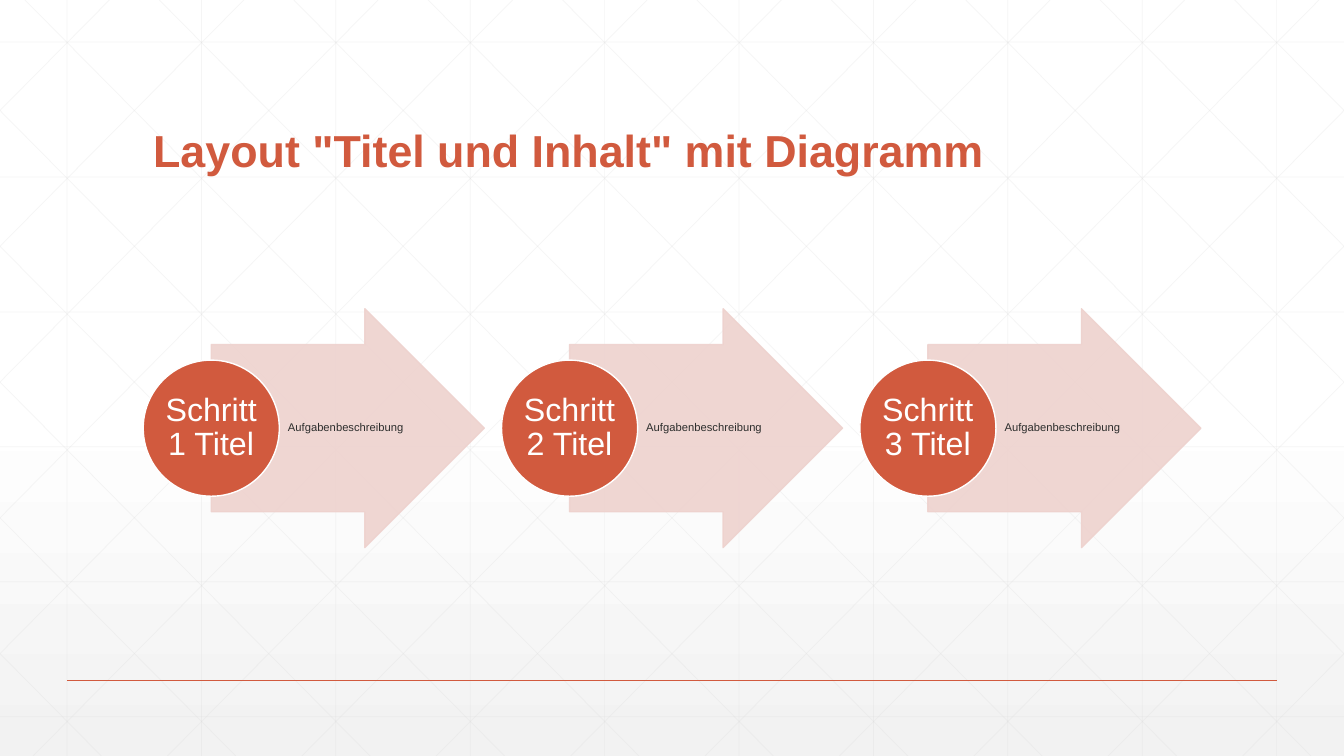
from copy import deepcopy

from lxml.etree import SubElement
from pptx import Presentation
from pptx.dml.color import RGBColor
from pptx.enum.shapes import MSO_CONNECTOR, MSO_SHAPE
from pptx.enum.text import MSO_ANCHOR, PP_ALIGN
from pptx.oxml.ns import qn
from pptx.util import Cm, Pt

TITLE = 'Layout "Titel und Inhalt" mit Diagramm'
STEPS = [
    ("Schritt 1 Titel", "Aufgabenbeschreibung"),
    ("Schritt 2 Titel", "Aufgabenbeschreibung"),
    ("Schritt 3 Titel", "Aufgabenbeschreibung"),
]
COLORS = {
    "accent": "D15A3E",
    "arrow": "EED2CE",
    "body": "2D2E2D",
    "grid": "D9D9D9",
    "white": "FFFFFF",
    "floor": "F2F2F2",
}
BACKGROUND = [(0, "white"), (0.53, "white"), (1, "floor")]
FONT = "Arial"

WIDTH, HEIGHT = 33.87, 19.05
GRID_X, GRID_STEP_X, COLUMNS = 1.69, WIDTH / 10, 10
GRID_Y, GRID_STEP_Y, ROWS = 1.06, 3.4, 6
DIAGONAL_X, DIAGONAL_RUN = 0.63, 0.99
FOOTER_Y = 17.15
STEP_LEFT, STEP_PITCH, STEP_MIDDLE = 3.61, 9.03, 10.79
CIRCLE = 3.43
ARROW_WIDTH, ARROW_HEIGHT = 6.88, 6.02
TASK_WIDTH, TASK_HEIGHT = 3.35, 4.22


def rgb(name):
    return RGBColor.from_string(COLORS[name])


def set_opacity(fill_owner, percent):
    for color in fill_owner.iter(qn("a:srgbClr")):
        SubElement(color, qn("a:alpha"), val=str(percent * 1000))


def write(shape, text, size, color, bold=False, align=PP_ALIGN.CENTER,
          anchor=MSO_ANCHOR.MIDDLE, inset=0.04):
    frame = shape.text_frame
    frame.word_wrap = True
    frame.vertical_anchor = anchor
    frame.margin_left = frame.margin_right = Cm(inset)
    frame.margin_top = frame.margin_bottom = Cm(inset / 2)
    paragraph = frame.paragraphs[0]
    paragraph.alignment = align
    paragraph.line_spacing = 0.9
    run = paragraph.add_run()
    run.text = text
    run.font.name = FONT
    run.font.size = Pt(size)
    run.font.bold = bold
    run.font.color.rgb = rgb(color)


def add_line(shapes, start, end, color, width, opacity=100):
    line = shapes.add_connector(
        MSO_CONNECTOR.STRAIGHT, *(Cm(value) for value in (*start, *end)))
    line.line.color.rgb = rgb(color)
    line.line.width = Pt(width)
    if opacity < 100:
        set_opacity(line._element.spPr, opacity)
    SubElement(line._element.spPr, qn("a:effectLst"))


def add_filled(shapes, preset, left, width, height, fill, outline):
    shape = shapes.add_shape(preset, Cm(left), Cm(STEP_MIDDLE - height / 2),
                             Cm(width), Cm(height))
    shape.shadow.inherit = False
    shape.fill.solid()
    shape.fill.fore_color.rgb = rgb(fill)
    shape.line.color.rgb = rgb(outline)
    shape.line.width = Pt(1)
    return shape


def paint_background(slide):
    fill = slide.background.fill
    fill.gradient()
    fill.gradient_angle = 270
    stop_list = next(slide.element.iter(qn("a:gsLst")))
    stop_list.insert(1, deepcopy(stop_list[0]))
    for stop, (position, color) in zip(fill.gradient_stops, BACKGROUND):
        stop.position = position
        stop.color.rgb = rgb(color)


def grid_lines():
    for column in range(COLUMNS):
        x = GRID_X + column * GRID_STEP_X
        yield (x, 0), (x, HEIGHT)
    for row in range(ROWS):
        y = GRID_Y + row * GRID_STEP_Y
        yield (0, y), (WIDTH, y)
    for index in range(-5, 10):
        x = DIAGONAL_X + index * GRID_STEP_X
        top = max(0, -x / DIAGONAL_RUN)
        bottom = min(HEIGHT, (WIDTH - x) / DIAGONAL_RUN)
        ends = [(x + DIAGONAL_RUN * y, y) for y in (top, bottom)]
        yield ends
        yield [(WIDTH - end_x, y) for end_x, y in ends]


def add_step(shapes, left, heading, task):
    arrow = add_filled(shapes, MSO_SHAPE.RIGHT_ARROW, left + CIRCLE / 2,
                       ARROW_WIDTH, ARROW_HEIGHT, "arrow", "arrow")
    arrow.adjustments[0], arrow.adjustments[1] = 0.7, 0.5
    set_opacity(arrow._element.spPr, 90)
    task_box = shapes.add_textbox(
        Cm(left + CIRCLE), Cm(STEP_MIDDLE - TASK_HEIGHT / 2),
        Cm(TASK_WIDTH), Cm(TASK_HEIGHT))
    write(task_box, task, 8, "body")
    circle = add_filled(shapes, MSO_SHAPE.OVAL, left, CIRCLE, CIRCLE,
                        "accent", "white")
    write(circle, heading, 23, "white")


def main():
    deck = Presentation()
    deck.slide_width, deck.slide_height = Cm(WIDTH), Cm(HEIGHT)
    slide = deck.slides.add_slide(deck.slide_layouts[5])
    paint_background(slide)

    grid = slide.shapes.add_group_shape()
    for start, end in grid_lines():
        add_line(grid.shapes, start, end, "grid", 0.5, opacity=25)
    add_line(slide.shapes, (GRID_X, FOOTER_Y), (WIDTH - GRID_X, FOOTER_Y),
             "accent", 1)

    title = slide.shapes.title
    title._element.getparent().append(title._element)
    title.left, title.top = Cm(STEP_LEFT), Cm(1.4)
    title.width, title.height = Cm(26.67), Cm(3.18)
    write(title, TITLE, 32, "accent", bold=True, align=PP_ALIGN.LEFT,
          anchor=MSO_ANCHOR.BOTTOM, inset=0.25)

    for index, (heading, task) in enumerate(STEPS):
        add_step(slide.shapes, STEP_LEFT + index * STEP_PITCH, heading, task)
    deck.save("out.pptx")


if __name__ == "__main__":
    main()
